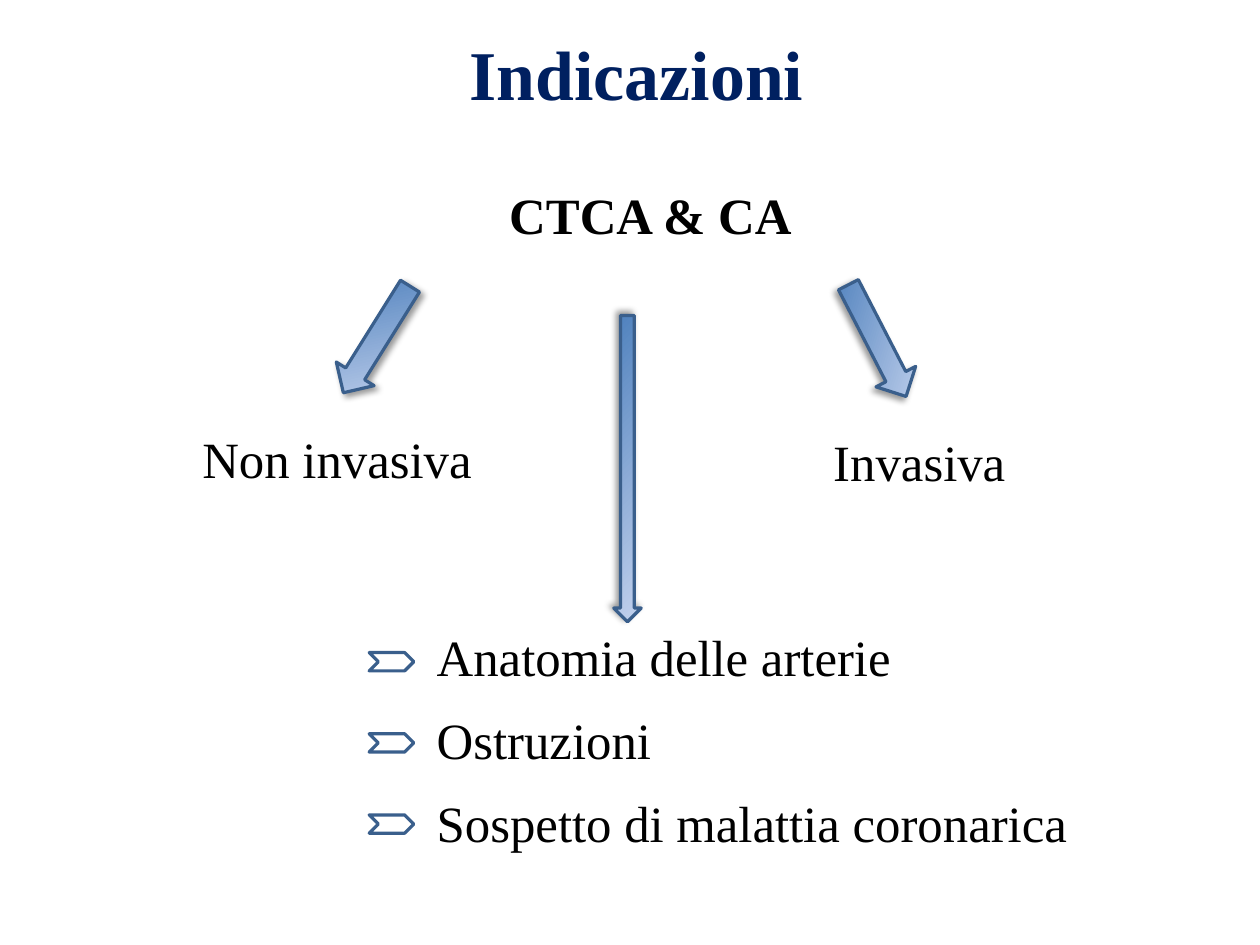
from lxml import etree
from pptx import Presentation
from pptx.dml.color import RGBColor
from pptx.enum.shapes import MSO_SHAPE
from pptx.enum.text import MSO_ANCHOR, MSO_AUTO_SIZE, PP_ALIGN
from pptx.oxml.ns import qn
from pptx.util import Inches, Pt

CHEVRON = MSO_SHAPE.CHEVRON
DOWN_ARROW = MSO_SHAPE.DOWN_ARROW
TOP = MSO_ANCHOR.TOP
NO_AUTOFIT = MSO_AUTO_SIZE.NONE
LEFT = PP_ALIGN.LEFT
CENTER = PP_ALIGN.CENTER

SLIDE_WIDTH = 28 / 2.54
SLIDE_HEIGHT = 21 / 2.54
FONT = "Times New Roman"
BLACK = "000000"
NAVY = "002060"
OUTLINE = "3A5F8C"
ARROW_TOP = "4F81BD"
ARROW_BOTTOM = "C2D1ED"


def color(value):
    return RGBColor.from_string(value)


def place(shape, box):
    shape.left, shape.top, shape.width, shape.height = map(Inches, box)


def write_text(shape, lines, size=32, text_color=BLACK, bold=False,
               alignment=LEFT, indent=0.12, line_spacing=1.0):
    frame = shape.text_frame
    frame.word_wrap = True
    frame.auto_size = NO_AUTOFIT
    frame.vertical_anchor = TOP
    frame.margin_left = frame.margin_right = 0
    frame.margin_top = frame.margin_bottom = 0
    frame.text = "\n".join(lines)
    for paragraph in frame.paragraphs:
        properties = paragraph._p.get_or_add_pPr()
        properties.set("marL", str(Inches(indent)))
        properties.set("indent", "0")
        etree.SubElement(properties, qn("a:buNone"))
        paragraph.alignment = alignment
        paragraph.line_spacing = line_spacing
        paragraph.space_before = Pt(0)
        paragraph.space_after = Pt(14.1)
        paragraph.font.name = FONT
        paragraph.font.size = Pt(size)
        paragraph.font.bold = bold
        paragraph.font.color.rgb = color(text_color)


def add_label(slide, box, text, **style):
    label = slide.shapes.add_textbox(*map(Inches, box))
    write_text(label, [text], **style)


def add_outlined_shape(slide, kind, box):
    shape = slide.shapes.add_shape(kind, *map(Inches, box))
    shape.shadow.inherit = False
    shape.line.color.rgb = color(OUTLINE)
    shape.line.width = Pt(2)
    return shape


def add_shadow(shape, direction):
    effects = shape._element.spPr.find(qn("a:effectLst"))
    shadow = etree.SubElement(
        effects, qn("a:outerShdw"), blurRad=str(Pt(4)), dist=str(Pt(3)),
        dir=str(direction * 60000), rotWithShape="0")
    shade = etree.SubElement(shadow, qn("a:srgbClr"), val=BLACK)
    etree.SubElement(shade, qn("a:alpha"), val="40000")


def add_arrow(slide, box, rotation, shadow_direction):
    arrow = add_outlined_shape(slide, DOWN_ARROW, box)
    arrow.rotation = rotation
    arrow.fill.gradient()
    arrow.fill.gradient_angle = 315
    for stop, value in zip(arrow.fill.gradient_stops, (ARROW_TOP, ARROW_BOTTOM)):
        stop.color.rgb = color(value)
    add_shadow(arrow, shadow_direction)


def add_title(slide, box):
    title = slide.shapes.title
    place(title, box)
    write_text(title, ["Indicazioni"], size=44, text_color=NAVY, bold=True,
               alignment=CENTER)


def add_branches(slide, box):
    left, top, width, height = box
    add_label(slide, (left, top, width, 0.71), "CTCA & CA", bold=True,
              alignment=CENTER, indent=0.36)
    add_label(slide, (left + 1.65, top + 2.13, 2.6, 0.71), "Non invasiva")
    add_label(slide, (left + 7.17, top + 1.89, 2.6, 0.71), "Invasiva",
              line_spacing=1.5)
    add_arrow(slide, (left + 3.1, top + 0.81, 0.39, 1.1), 32, 45)
    add_arrow(slide, (left + 7.48, top + 0.82, 0.39, 1.1), 332.7, 135)
    add_arrow(slide, (left + 5.37, top + 1.15, 0.24, height - 1.15), 0, 225)


def add_findings(slide, box):
    left, top, width, height = box
    findings = ["Anatomia delle arterie", "Ostruzioni",
                "Sospetto di malattia coronarica"]
    body = slide.placeholders[1]
    place(body, (left + 0.47, top, width - 0.47, height))
    write_text(body, findings)
    for row in range(len(findings)):
        marker = add_outlined_shape(
            slide, CHEVRON, (left, top + 0.24 + row * 0.71, 0.39, 0.16))
        marker.fill.solid()
        marker.fill.fore_color.rgb = color("FFFFFF")


def main():
    presentation = Presentation()
    presentation.slide_width = Inches(SLIDE_WIDTH)
    presentation.slide_height = Inches(SLIDE_HEIGHT)
    slide = presentation.slides.add_slide(presentation.slide_layouts[1])
    add_title(slide, (0, 0.27, SLIDE_WIDTH, 0.56))
    add_branches(slide, (0, 1.61, SLIDE_WIDTH, 3.83))
    add_findings(slide, (3.23, 5.47, 6.3, 1.97))
    presentation.save("out.pptx")


if __name__ == "__main__":
    main()
